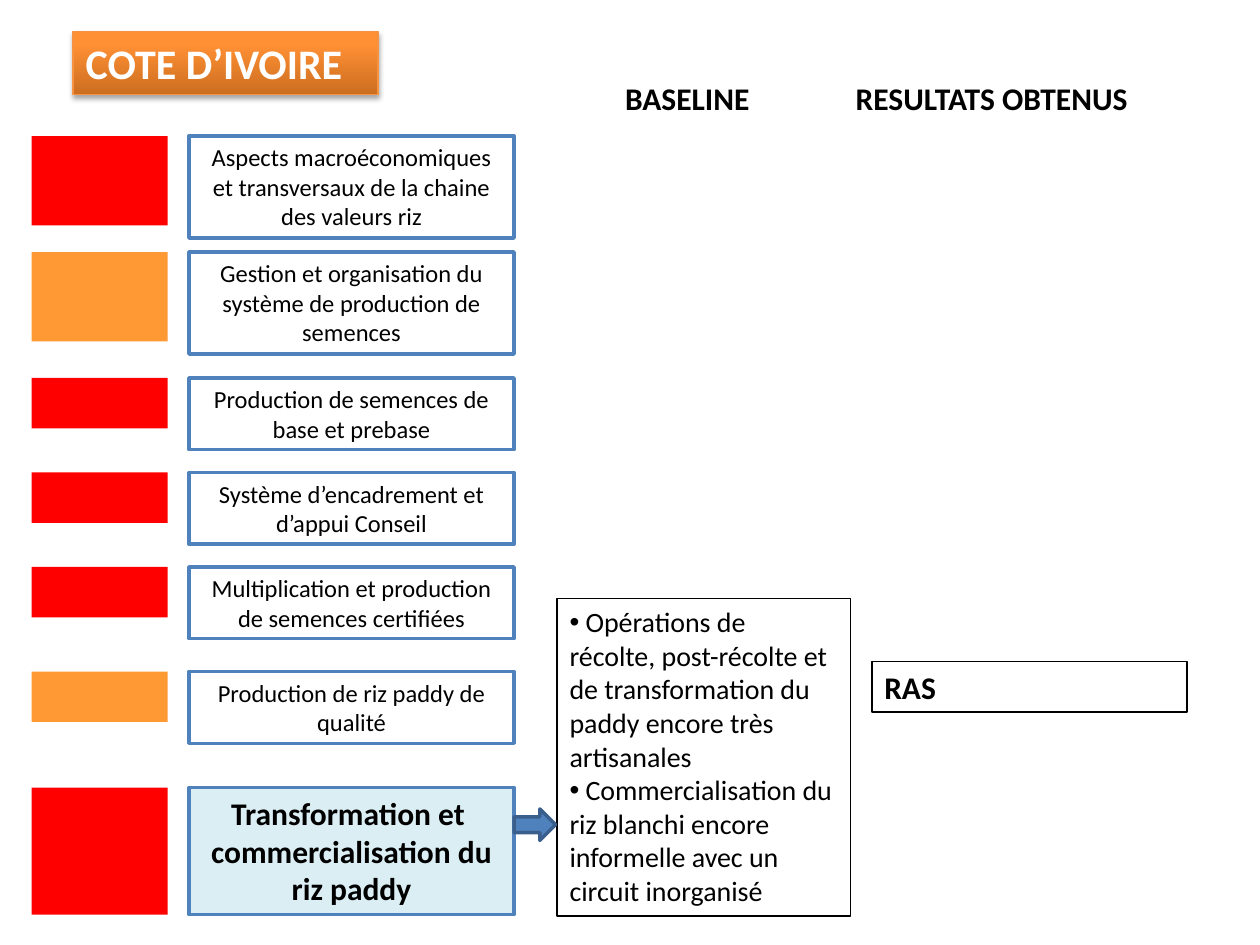
from lxml.etree import SubElement
from pptx import Presentation
from pptx.dml.color import RGBColor
from pptx.enum.shapes import MSO_SHAPE
from pptx.enum.text import MSO_ANCHOR, MSO_AUTO_SIZE, PP_ALIGN
from pptx.oxml.ns import qn
from pptx.util import Inches, Pt

BLACK = RGBColor(0x00, 0x00, 0x00)
WHITE = RGBColor(0xFF, 0xFF, 0xFF)
RED = RGBColor(0xFF, 0x00, 0x00)
ORANGE = RGBColor(0xFF, 0x99, 0x33)
BLUE = RGBColor(0x4F, 0x81, 0xBD)
DARK_BLUE = RGBColor(0x3A, 0x5F, 0x8C)
PALE_BLUE = RGBColor(0xDB, 0xEE, 0xF4)
TITLE_DARK = RGBColor(0xCC, 0x6E, 0x20)
TITLE_LIGHT = RGBColor(0xFF, 0x90, 0x34)
TITLE_EDGE = RGBColor(0xF6, 0x92, 0x40)

STAGES = [
    (1.08, 0.81, 0.71, RED, "Aspects macroéconomiques et transversaux de la chaine des valeurs riz"),
    (2, 0.81, 0.71, ORANGE, "Gestion et organisation du système de production de semences"),
    (3, 0.57, 0.4, RED, "Production de semences de base et prebase"),
    (3.75, 0.57, 0.4, RED, "Système d’encadrement et d’appui Conseil"),
    (4.5, 0.57, 0.4, RED, "Multiplication et production de semences certifiées"),
    (5.33, 0.57, 0.4, ORANGE, "Production de riz paddy de qualité"),
    (6.25, 1.01, 1.01, RED, "Transformation et  commercialisation du riz paddy"),
]
FINDINGS = [
    " Opérations de récolte, post-récolte et de transformation du paddy encore très artisanales",
    " Commercialisation du riz blanchi encore informelle avec un circuit inorganisé",
]


def place(shape, box):
    """Move a shape to a box of left, top, width and height in inches."""
    shape.left, shape.top, shape.width, shape.height = map(Inches, box)


def write_text(shape, *lines, size=14, bold=False, color=BLACK, align=PP_ALIGN.LEFT, anchor=MSO_ANCHOR.TOP):
    """Fill a shape with one formatted paragraph for each line."""
    frame = shape.text_frame
    frame.word_wrap = True
    frame.auto_size = MSO_AUTO_SIZE.NONE
    frame.vertical_anchor = anchor
    frame.text = "\n".join(lines)
    for paragraph in frame.paragraphs:
        paragraph.alignment = align
        paragraph.space_before = Pt(0)
        font = paragraph.runs[0].font
        font.name, font.size, font.bold = "Calibri", Pt(size), bold
        font.color.rgb = color


def outline(shape, color, width):
    """Give a shape a solid outline."""
    shape.line.color.rgb = color
    shape.line.width = Pt(width)


def add_block(slide, box, fill=None, line=None, width=1, kind=MSO_SHAPE.RECTANGLE):
    """Add a flat shape with an optional fill and outline."""
    shape = slide.shapes.add_shape(kind, *map(Inches, box))
    shape.shadow.inherit = False
    if fill is None:
        shape.fill.background()
    else:
        shape.fill.solid()
        shape.fill.fore_color.rgb = fill
    if line is None:
        shape.line.fill.background()
    else:
        outline(shape, line, width)
    return shape


def add_title(slide, box, text):
    """Format the title placeholder as a shaded orange banner."""
    title = slide.shapes.title
    place(title, box)
    write_text(title, text, size=24, bold=True, color=WHITE)
    title.fill.gradient()
    title.fill.gradient_angle = 90
    stops = zip(title.fill.gradient_stops, (0, 0.8), (TITLE_DARK, TITLE_LIGHT))
    for stop, position, color in stops:
        stop.position = position
        stop.color.rgb = color
    outline(title, TITLE_EDGE, 0.75)
    title.shadow.inherit = False
    effects = title.element.spPr.find(qn("a:effectLst"))
    shadow = SubElement(effects, qn("a:outerShdw"), blurRad=str(Pt(3.1)), dist=str(Pt(1.8)),
                        dir="5400000", rotWithShape="0")
    shade = SubElement(shadow, qn("a:srgbClr"), val=str(BLACK))
    SubElement(shade, qn("a:alpha"), val="35000")


def add_heading(slide, box, text):
    """Add a bold centred column heading."""
    heading = slide.shapes.add_textbox(*map(Inches, box))
    write_text(heading, text, size=18, bold=True, align=PP_ALIGN.CENTER)


def add_stages(slide, left, marker_width, gap, label_width):
    """Add a column of status markers and labels, the last one highlighted."""
    label_left = left + marker_width + gap
    for stage in STAGES:
        top, label_height, marker_height, status, text = stage
        current = stage is STAGES[-1]
        add_block(slide, (left, top, marker_width, marker_height), status)
        label = add_block(slide, (label_left, top, label_width, label_height),
                          PALE_BLUE if current else WHITE, BLUE, 2)
        write_text(label, text, size=18 if current else 14, bold=current, align=PP_ALIGN.CENTER)


def add_findings(slide, box):
    """Format the body placeholder as an outlined bullet list."""
    body = slide.placeholders[1]
    place(body, box)
    write_text(body, *FINDINGS, size=16)
    outline(body, BLACK, 1)
    for paragraph in body.text_frame.paragraphs:
        properties = paragraph._p.get_or_add_pPr()
        properties.set("marL", "0")
        properties.set("indent", "0")


def add_result(slide, box, text):
    """Add the outlined result box."""
    result = add_block(slide, box, line=BLACK)
    write_text(result, text, size=18, bold=True)


def main():
    """Build and save the presentation."""
    presentation = Presentation()
    presentation.slide_width, presentation.slide_height = Inches(10), Inches(7.5)
    slide = presentation.slides.add_slide(presentation.slide_layouts[1])
    add_title(slide, (0.58, 0.25, 2.42, 0.5), "COTE D’IVOIRE")
    add_heading(slide, (4.58, 0.58, 1.75, 0.4), "BASELINE")
    add_heading(slide, (6.33, 0.58, 3.08, 0.4), "RESULTATS OBTENUS")
    add_stages(slide, left=0.25, marker_width=1.08, gap=0.17, label_width=2.58)
    add_block(slide, (4.08, 6.42, 0.33, 0.25), BLUE, DARK_BLUE, 2, MSO_SHAPE.RIGHT_ARROW)
    add_findings(slide, (4.42, 4.75, 2.33, 2.52))
    add_result(slide, (6.92, 5.25, 2.5, 0.4), "RAS")
    presentation.save("out.pptx")


if __name__ == "__main__":
    main()
